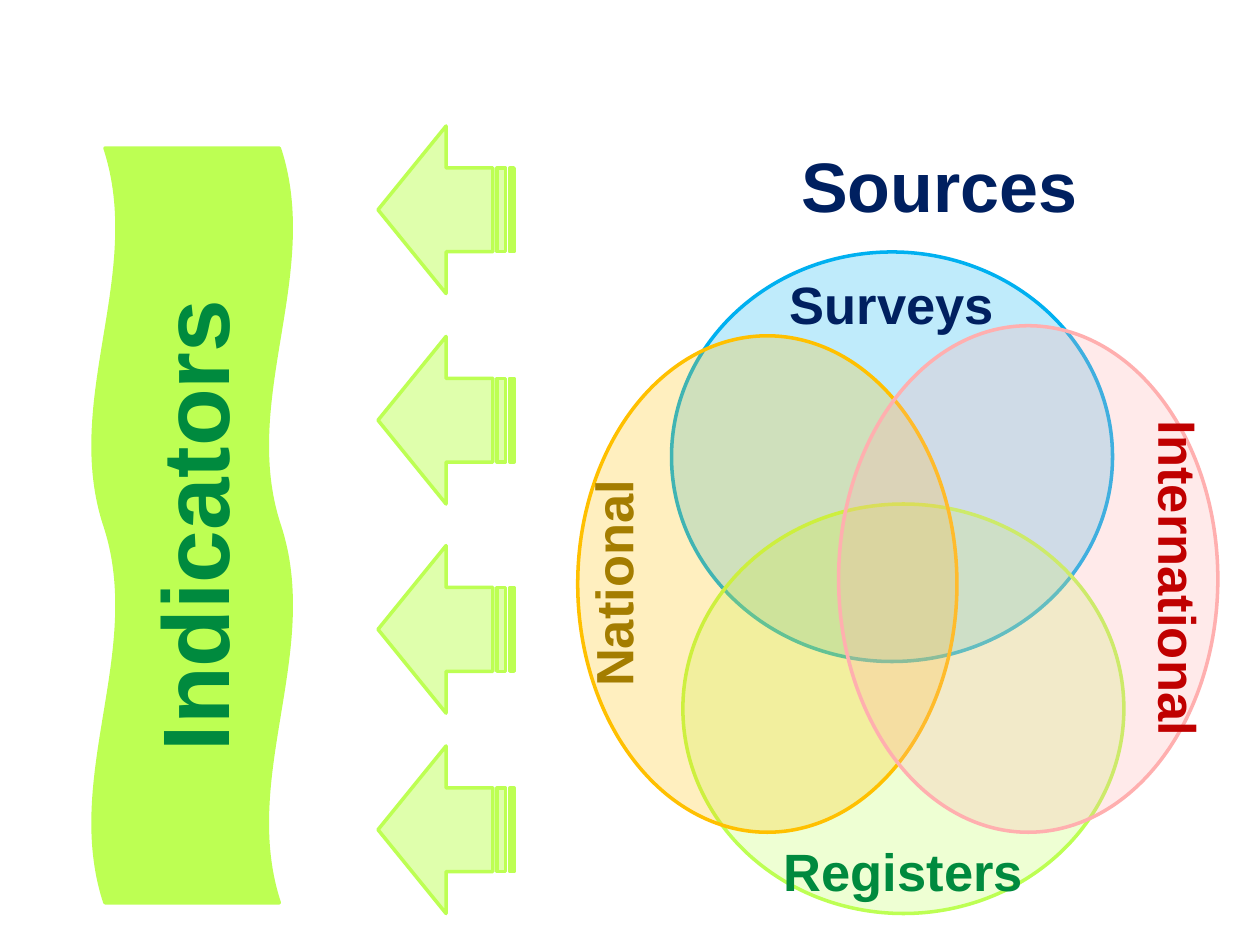
"""Build a slide on indicators drawn from four overlapping kinds of sources."""
import pptx
import pptx.util
from lxml import etree
from pptx.dml.color import RGBColor
from pptx.enum.shapes import MSO_SHAPE
from pptx.enum.text import MSO_ANCHOR, PP_ALIGN
from pptx.oxml.ns import qn
from pptx.util import Inches, Pt

COLORS = {
    "navy": "002060",
    "green": "008A3E",
    "ochre": "A47D00",
    "red": "C00000",
    "blue": "00B0F0",
    "lime": "BDFF53",
    "amber": "FFC000",
    "pink": "FFAFAF",
}
ELLIPSES = [
    ((5.33, 2, 3.5, 3.25), 0, "blue"),
    ((5.42, 4, 3.5, 3.25), 0, "lime"),
    ((4.12, 3.13, 3.94, 3.01), 270, "amber"),
    ((6.15, 3.09, 4.02, 3.01), 90, "pink"),
]
LABELS = [
    ("Surveys", (7.08, 2.41), 0, "navy"),
    ("Registers", (7.17, 6.91), 0, "green"),
    ("National", (4.86, 4.63), 270, "ochre"),
    ("International", (9.36, 4.59), 90, "red"),
]
LABEL_WIDTH, LABEL_HEIGHT = 3, 0.58
ARROW_TOPS = [1, 2.67, 4.33, 5.92]


def color(name):
    return RGBColor.from_string(COLORS[name])


def write_text(shape, text, size, color_name):
    frame = shape.text_frame
    frame.word_wrap = True
    frame.vertical_anchor = MSO_ANCHOR.MIDDLE
    para = frame.paragraphs[0]
    para.text = text
    para.alignment = PP_ALIGN.CENTER
    para.font.name = "Arial"
    para.font.size = Pt(size)
    para.font.bold = True
    para.font.color.rgb = color(color_name)


def add_figure(page, kind, place, rotation, color_name, opacity=100):
    shape = page.shapes.add_shape(kind, *map(Inches, place))
    shape.rotation = rotation
    shape.shadow.inherit = False
    shape.fill.solid()
    shape.fill.fore_color.rgb = color(color_name)
    shape.line.color.rgb = color(color_name)
    shape.line.width = Pt(2)
    if opacity < 100:
        fill = shape.fill._xPr.find(qn("a:solidFill"))
        etree.SubElement(fill[0], qn("a:alpha"), val=str(opacity * 1000))
    return shape


def add_label(page, text, place, size, color_name, rotation=0):
    box = page.shapes.add_textbox(*map(Inches, place))
    box.rotation = rotation
    write_text(box, text, size, color_name)


def main():
    deck = pptx.Presentation()
    deck.slide_width, deck.slide_height = Inches(10), Inches(7.5)
    page = deck.slides.add_slide(deck.slide_layouts[6])

    add_label(page, "Sources", (5.33, 1.08, 4.25, 0.77), 40, "navy")
    wave = add_figure(page, MSO_SHAPE.DOUBLE_WAVE, (-1.47, 3.38, 5.99, 1.58), 270, "lime")
    write_text(wave, "Indicators", 54, "green")

    for place, rotation, color_name in ELLIPSES:
        add_figure(page, MSO_SHAPE.OVAL, place, rotation, color_name, 25)
    for text, (middle_x, middle_y), rotation, color_name in LABELS:
        place = (middle_x - LABEL_WIDTH / 2, middle_y - LABEL_HEIGHT / 2,
                 LABEL_WIDTH, LABEL_HEIGHT)
        add_label(page, text, place, 30, color_name, rotation)
    for top in ARROW_TOPS:
        add_figure(page, MSO_SHAPE.STRIPED_RIGHT_ARROW, (3, top, 1.08, 1.33), 180, "lime", 48)

    deck.save("out.pptx")


if __name__ == "__main__":
    main()
